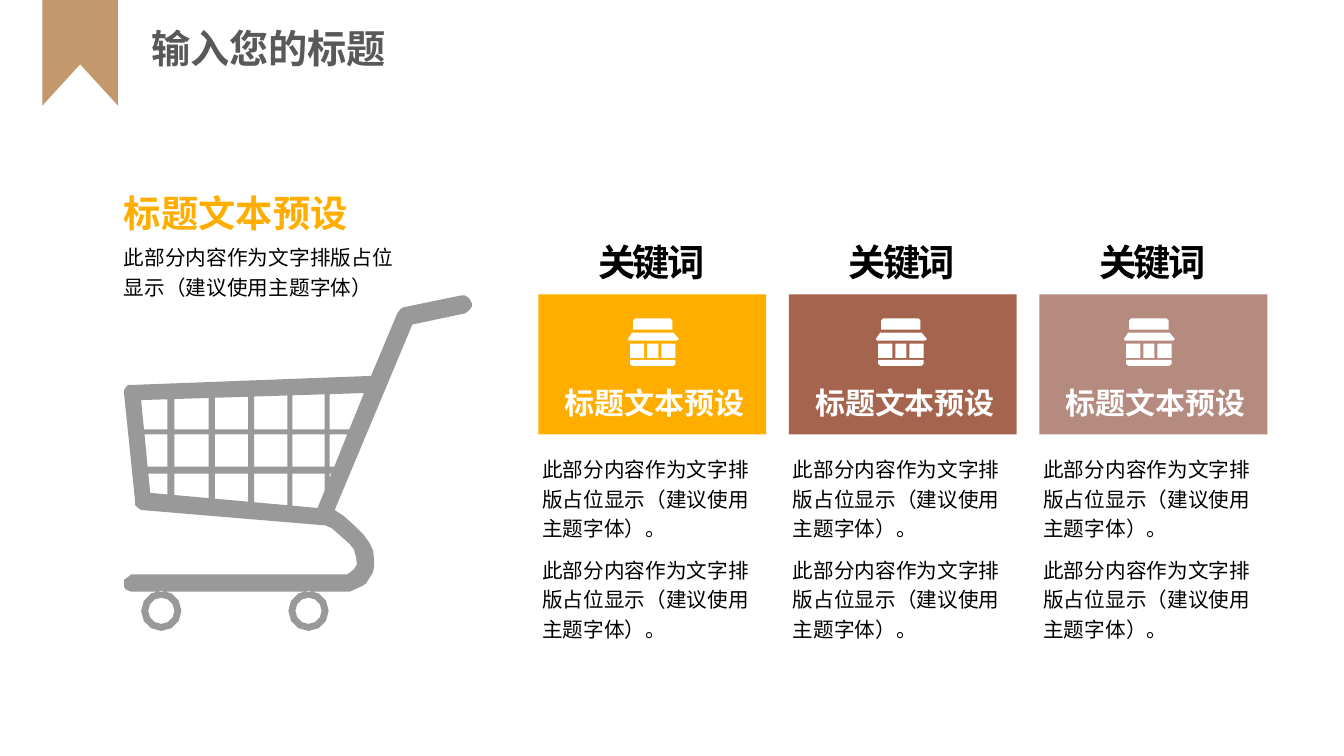
from math import cos, pi, sin
from pptx import Presentation
from pptx.dml.color import RGBColor
from pptx.enum.shapes import MSO_SHAPE as Shape
from pptx.enum.text import MSO_ANCHOR as Anchor, MSO_AUTO_SIZE as AutoSize, PP_ALIGN as Align
from pptx.oxml.ns import qn
from pptx.util import Inches, Pt

# Content
TITLE = "输入您的标题"
HEADING = "标题文本预设"
INTRO = "此部分内容作为文字排版占位显示（建议使用主题字体）"
KEYWORD = "关键词"
CARD_NOTES = [INTRO + "。"] * 2


class Theme:
    title_font, font = "Noto Sans CJK SC", "Roboto Condensed"
    ribbon, white, black = "C3986D", "FFFFFF", "000000"
    title, accent, cart = "595959", "FFAE00", "999999"
    cards = ["FFAE00", "A5644E", "B58B80"]
    title_size, heading_size, label_size, body_size = 28, 26.6, 21.4, 14.7


# Geometry in inches
CARD_LEFT, CARD_TOP, CARD_W, CARD_H, CARD_PITCH = 5.34, 2.92, 2.26, 1.39, 2.485
ICON_LEFT, ICON_TOP, ICON_PITCH = 6.23, 3.16, 2.46
NOTE_TOP, NOTE_PITCH = 4.43, 1.0

CART_FRAME = [
    # handle and left side of the basket
    (4.68, 3.01), (4.66, 2.97), (4.64, 2.95), (4.61, 2.93), (4.58, 2.93),
    (4, 3.05), (3.97, 3.07), (3.94, 3.11), (3.68, 3.73), (1.3, 3.82),
    (1.27, 3.82), (1.25, 3.84), (1.23, 3.87), (1.23, 3.9), (1.34, 4.97),
    (1.34, 5.01), (1.37, 5.04), (1.4, 5.06), (3.19, 5.21),
    # inner curve down to the base
    (3.22, 5.21), (3.29, 5.24), (3.37, 5.31), (3.47, 5.4), (3.51, 5.45),
    (3.53, 5.52), (3.54, 5.6), (3.51, 5.65), (3.47, 5.68), (3.44, 5.7),
    (1.3, 5.7), (1.25, 5.74), (1.23, 5.75), (1.23, 5.82), (1.25, 5.85),
    (1.3, 5.87), (3.47, 5.87),
    # outer curve back up to the handle
    (3.58, 5.82), (3.63, 5.79), (3.66, 5.74), (3.7, 5.68), (3.71, 5.62),
    (3.71, 5.55), (3.7, 5.46), (3.66, 5.38), (3.61, 5.31), (3.51, 5.21),
    (3.41, 5.12), (3.32, 5.06), (4.09, 3.22), (4.61, 3.11), (4.64, 3.09),
    (4.66, 3.07), (4.68, 3.04),
]
BASKET_OPENING = [(1.4, 3.97), (3.61, 3.9), (3.15, 5.04), (1.49, 4.89)]
BASKET_COLUMNS = [(1.4, 1.66), (1.73, 2.07), (2.13, 2.46), (2.52, 2.85), (2.9, 3.22), (3.27, 3.61)]
BASKET_ROWS = [(3.9, 4.26), (4.31, 4.63), (4.7, 5.04)]
WHEEL_CENTRES, WHEEL_RADII = [(1.6, 6.06), (3.06, 6.06)], (0.2, 0.13)

SHOP_ICON = [
    [(0.05, 0.11), (0.05, 0.02), (0.07, 0), (0.42, 0), (0.44, 0.02), (0.44, 0.11)],
    [(0.04, 0.14), (0.45, 0.14), (0.5, 0.2), (0.5, 0.21), (0.48, 0.22), (0.01, 0.22), (0, 0.21), (0, 0.2)],
    *[[(x, 0.25), (x + w, 0.25), (x + w, 0.39), (x, 0.39)] for x, w in [(0.02, 0.14), (0.19, 0.11), (0.33, 0.14)]],
    [(0.02, 0.41), (0.47, 0.41), (0.47, 0.45), (0.45, 0.47), (0.04, 0.47), (0.02, 0.45)],
]


def color(code):
    return RGBColor.from_string(code)


def paint(sp, fill):
    sp.shadow.inherit = False
    sp.fill.solid()
    sp.fill.fore_color.rgb = color(fill)
    sp.line.fill.background()


def add_block(shapes, kind, box, fill):
    paint(shapes.add_shape(kind, *map(Inches, box)), fill)


def add_text(shapes, text, box, size, fill, font=Theme.font, bold=False, align=Align.LEFT,
             anchor=Anchor.TOP, insets=(0.1, 0.05), spacing=None, tracking=None, grow=False):
    tf = shapes.add_textbox(*map(Inches, box)).text_frame
    tf.word_wrap = True
    tf.auto_size = AutoSize.SHAPE_TO_FIT_TEXT if grow else AutoSize.NONE
    tf.vertical_anchor = anchor
    tf.margin_left = tf.margin_right = Inches(insets[0])
    tf.margin_top = tf.margin_bottom = Inches(insets[1])
    tf.text = text
    p = tf.paragraphs[0]
    p.alignment = align
    if spacing:
        p.line_spacing = spacing
    r = p.runs[0]
    r.font.name, r.font.size, r.font.bold = font, Pt(size), bold
    r.font.color.rgb = color(fill)
    rPr = r.font._element
    rPr.find(qn("a:latin")).addnext(rPr.makeelement(qn("a:ea"), {"typeface": font}))
    if tracking:
        rPr.set("spc", str(tracking * 100))


def add_outline(shapes, contours, fill, left=0, top=0):
    placed = [[(Inches(left + x), Inches(top + y)) for x, y in c] for c in contours]
    builder = shapes.build_freeform(*placed[0][0])
    for i, points in enumerate(placed):
        if i:
            builder.move_to(*points[0])
        builder.add_line_segments(points[1:], close=True)
    paint(builder.convert_to_shape(), fill)


def clip(points, axis, limit, sign):
    """Keep the part of a polygon where sign * (coordinate - limit) >= 0."""
    kept = []
    for a, b in zip(points, points[1:] + points[:1]):
        da, db = sign * (a[axis] - limit), sign * (b[axis] - limit)
        if da >= 0:
            kept.append(a)
        if da * db < 0:
            t = da / (da - db)
            kept.append((a[0] + t * (b[0] - a[0]), a[1] + t * (b[1] - a[1])))
    return kept


def basket_cell(column, row):
    cell = BASKET_OPENING
    for axis, (low, high) in enumerate((column, row)):
        cell = clip(clip(cell, axis, low, 1), axis, high, -1)
    return cell


def circle(centre, radius, steps=12):
    angles = [2 * pi * i / steps for i in range(steps)]
    return [(centre[0] + radius * cos(a), centre[1] + radius * sin(a)) for a in angles]


def add_header(shapes):
    add_block(shapes, Shape.RECTANGLE, (0.42, -0.01, 0.75, 1.06), Theme.ribbon)
    add_block(shapes, Shape.ISOSCELES_TRIANGLE, (0.42, 0.64, 0.75, 0.41), Theme.white)
    add_text(shapes, TITLE, (1.4, 0.19, 3.11, 0.57), Theme.title_size, Theme.title,
             font=Theme.title_font, bold=True, grow=True)


def add_cart(shapes):
    cells = [basket_cell(c, r) for c in BASKET_COLUMNS for r in BASKET_ROWS]
    wheels = [circle(c, radius) for c in WHEEL_CENTRES for radius in WHEEL_RADII]
    add_outline(shapes, [CART_FRAME] + [c for c in cells if c] + wheels, Theme.cart)


def add_intro(shapes):
    add_text(shapes, INTRO, (1.23, 2.38, 2.86, 0.87), Theme.body_size, Theme.black,
             insets=(0, 0), spacing=1.2)
    add_text(shapes, HEADING, (1.23, 1.89, 2.86, 0.34), Theme.heading_size, Theme.accent,
             bold=True, insets=(0, 0))


def add_card(shapes, i, fill):
    left = CARD_LEFT + i * CARD_PITCH
    add_block(shapes, Shape.RECTANGLE, (left, CARD_TOP, CARD_W, CARD_H), fill)
    add_text(shapes, KEYWORD, (left, 2.37, 2.24, 0.45), Theme.heading_size, Theme.black, bold=True,
             align=Align.CENTER, anchor=Anchor.MIDDLE, insets=(0.13, 0.07), tracking=-2)
    add_text(shapes, HEADING, (left + 0.06, 3.79, 2.18, 0.4), Theme.label_size, Theme.white,
             bold=True, align=Align.CENTER, anchor=Anchor.MIDDLE)
    for j, note in enumerate(CARD_NOTES):
        add_text(shapes, note, (left - 0.06, NOTE_TOP + j * NOTE_PITCH, 2.36, 0.99), Theme.body_size,
                 Theme.black, anchor=Anchor.MIDDLE, spacing=1.2, grow=True)
    add_outline(shapes, SHOP_ICON, Theme.white, ICON_LEFT + i * ICON_PITCH, ICON_TOP)


def main():
    prs = Presentation()
    prs.slide_width, prs.slide_height = Inches(13.33), Inches(7.5)
    s = prs.slides.add_slide(prs.slide_layouts[6])
    add_header(s.shapes)
    add_cart(s.shapes)
    add_intro(s.shapes)
    for i, fill in enumerate(Theme.cards):
        add_card(s.shapes.add_group_shape().shapes, i, fill)
    prs.save("out.pptx")


if __name__ == "__main__":
    main()
